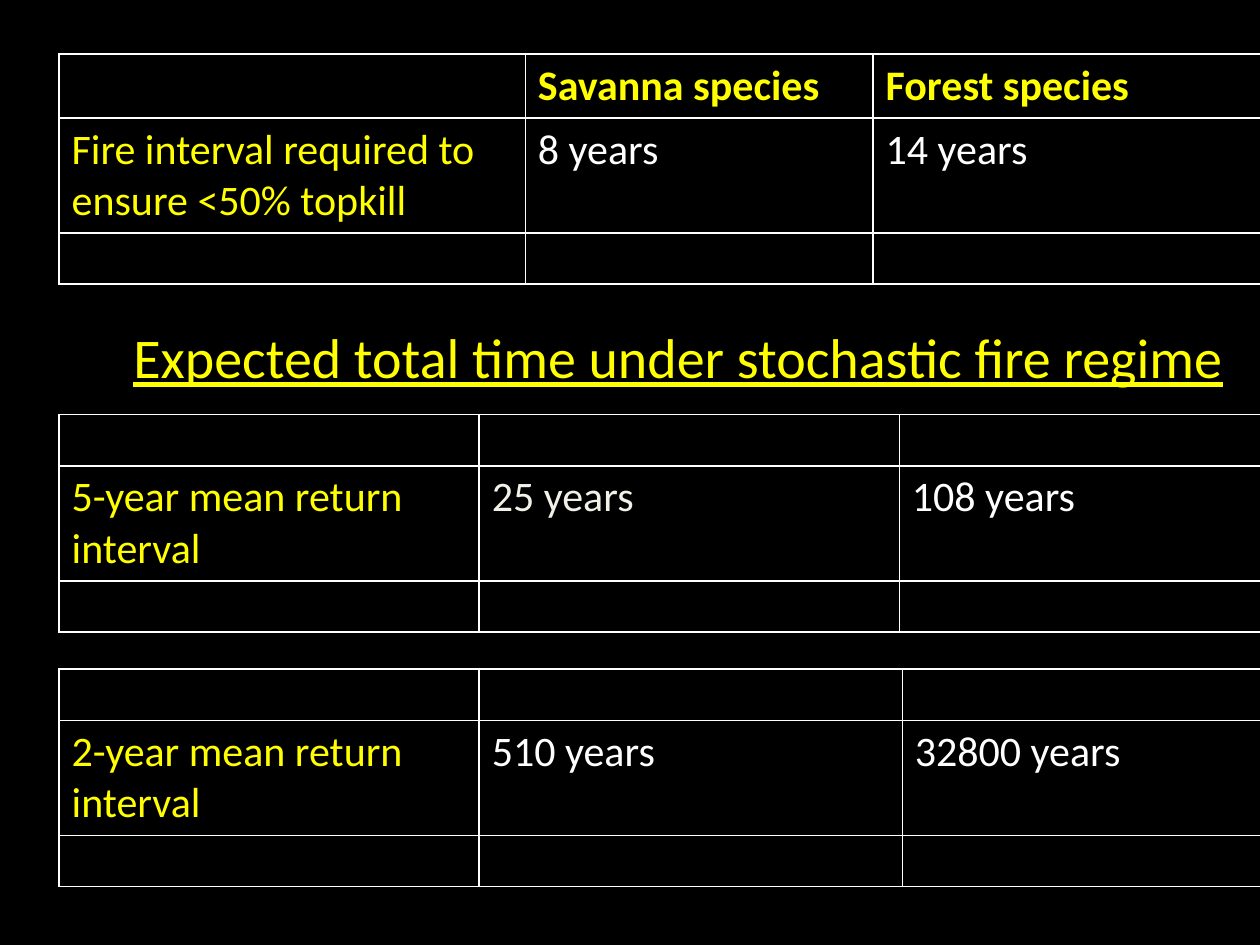
from dataclasses import dataclass

from pptx import Presentation
from pptx.dml.color import RGBColor
from pptx.enum.text import MSO_AUTO_SIZE
from pptx.util import Cm, Pt

FIT_SHAPE = MSO_AUTO_SIZE.SHAPE_TO_FIT_TEXT


@dataclass(frozen=True)
class Theme:
    background: RGBColor = RGBColor(0x00, 0x00, 0x00)
    label: RGBColor = RGBColor(0xFF, 0xFF, 0x00)
    value: RGBColor = RGBColor(0xFF, 0xFF, 0xFF)
    soft_value: RGBColor = RGBColor(0xF2, 0xF1, 0xE8)
    typeface: str = "Calibri"
    body: Pt = Pt(24)
    heading: Pt = Pt(32)


theme = Theme()


def write(frame, text, color, size=theme.body, **extra):
    run = frame.paragraphs[0].add_run()
    run.text = text
    run.font.color.rgb = color
    for attribute, setting in {"name": theme.typeface, "size": size, **extra}.items():
        setattr(run.font, attribute, setting)


presentation = Presentation()
presentation.slide_width = Cm(25.4)
presentation.slide_height = Cm(19.05)
slide = presentation.slides.add_slide(presentation.slide_layouts[6])
slide.background.fill.solid()
slide.background.fill.fore_color.rgb = theme.background

left = Cm(1.19)
row_heights = [Cm(0.94), Cm(1.83), Cm(0.94)]
species = ["", "Savanna species", "Forest species"]
no_header = ["", "", ""]
sections = [
    (Cm(1.09), [9.4, 7.01, 8.2], species,
     ["Fire interval required to ensure <50% topkill", "8 years", "14 years"],
     theme.value),
    (Cm(8.36), [8.47, 8.47, 8.47], no_header,
     ["5-year mean return interval", "25 years", "108 years"],
     theme.soft_value),
    (Cm(13.49), [8.47, 8.53, 8.43], no_header,
     ["2-year mean return interval", "510 years", "32800 years"],
     theme.value),
]

for top, widths, header, times, savanna_color in sections:
    interval_table = slide.shapes.add_table(
        3, 3, left, top, Cm(sum(widths)), sum(row_heights)
    ).table
    for column, width in zip(interval_table.columns, widths):
        column.width = Cm(width)
    for row, height in zip(interval_table.rows, row_heights):
        row.height = height
    for cell in interval_table.iter_cells():
        cell.fill.solid()
        cell.fill.fore_color.rgb = theme.background
    time_colors = [theme.label, savanna_color, theme.value]
    for index, (name, time, color) in enumerate(zip(header, times, time_colors)):
        if name:
            write(interval_table.cell(0, index).text_frame, name, theme.label, bold=True)
        write(interval_table.cell(1, index).text_frame, time, color, bold=False)

heading = slide.shapes.add_textbox(Cm(2.44), Cm(6.38), Cm(22.71), Cm(1.63)).text_frame
heading.word_wrap = False
heading.auto_size = FIT_SHAPE
write(heading, "Expected total time under stochastic fire regime",
      theme.label, theme.heading, underline=True)

presentation.save("out.pptx")
